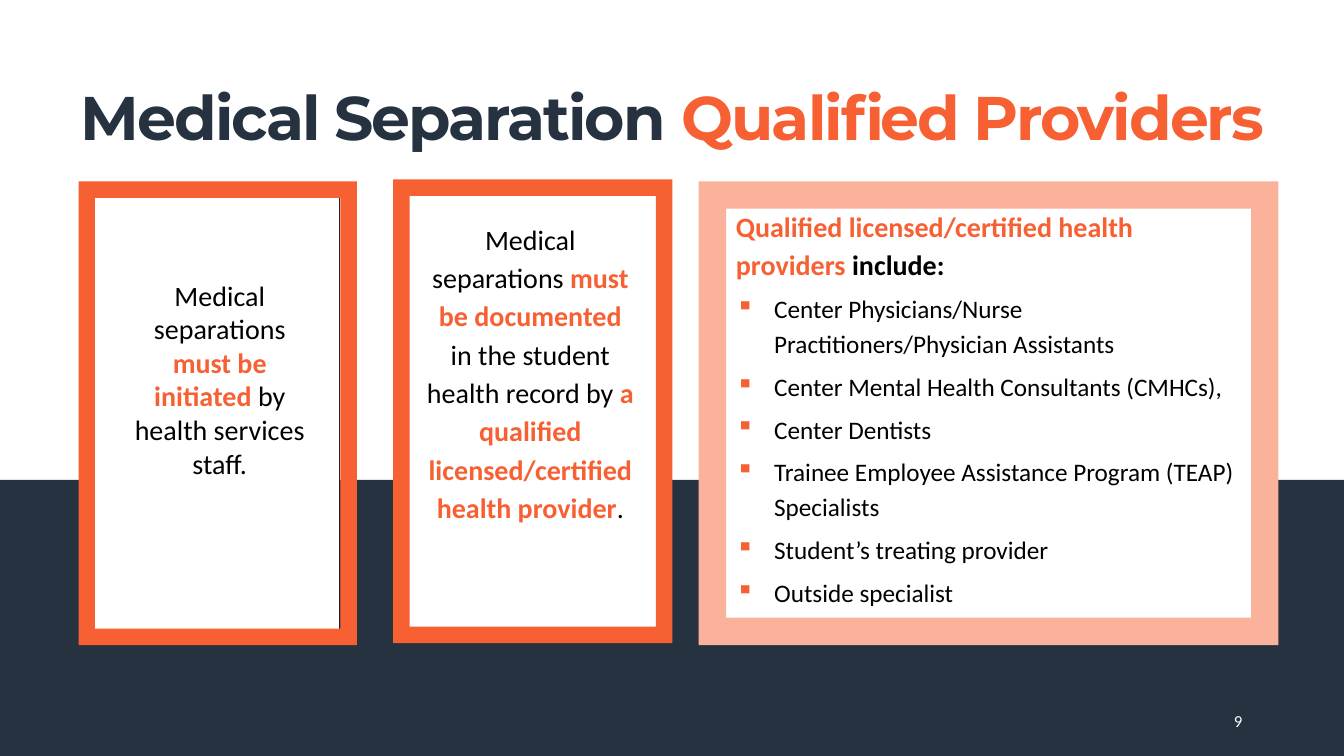
from dataclasses import dataclass

from lxml.etree import SubElement
from pptx import Presentation
from pptx.dml.color import RGBColor
from pptx.enum.shapes import MSO_SHAPE as Preset
from pptx.enum.text import MSO_ANCHOR as Anchor, MSO_AUTO_SIZE as AutoSize, PP_ALIGN as Align
from pptx.oxml.ns import qn
from pptx.util import Inches, Pt


@dataclass(frozen=True)
class Theme:
    navy: str = "263240"
    outline: str = "1C252F"
    orange: str = "F76033"
    peach: str = "FBB29B"
    white: str = "FFFFFF"
    black: str = "000000"
    heading_font: str = "Montserrat"
    body_font: str = "Calibri"
    title_size: int = 44
    body_size: int = 20
    bullet_size: int = 18
    number_size: int = 12


THEME = Theme()
LOOSE = 1.14  # line spacing of the longer texts

PROVIDERS = [
    "Center Physicians/Nurse Practitioners/Physician Assistants",
    "Center Mental Health Consultants (CMHCs),",
    "Center Dentists",
    "Trainee Employee Assistance Program (TEAP) Specialists",
    "Student’s treating provider",
    "Outside specialist",
]


def add_block(shapes, preset, box, fill, line=None, thickness=None):
    """Add a filled shape; thickness sets the border share of a frame."""
    shape = shapes.add_shape(preset, *map(Inches, box))
    shape.shadow.inherit = False
    shape.fill.solid()
    shape.fill.fore_color.rgb = RGBColor.from_string(fill)
    if line:
        shape.line.color.rgb = RGBColor.from_string(line)
        shape.line.width = Pt(1)
    else:
        shape.line.fill.background()
    if thickness:
        shape.adjustments[0] = thickness


def add_text_box(shapes, box, anchor=Anchor.TOP):
    text_frame = shapes.add_textbox(*map(Inches, box)).text_frame
    text_frame.word_wrap = True
    text_frame.vertical_anchor = anchor
    return text_frame


def write(paragraph, runs, size, font=THEME.body_font, align=Align.LEFT, spacing=None, before=0):
    """Fill a paragraph with (text, colour, bold) runs."""
    paragraph.alignment = align
    paragraph.space_before = Pt(before)
    if spacing:
        paragraph.line_spacing = spacing
    paragraph.font.name = font
    paragraph.font.size = Pt(size)
    for text, color, bold in runs:
        run = paragraph.add_run()
        run.text = text
        run.font.bold = bold
        run.font.color.rgb = RGBColor.from_string(color)


def add_bullet(paragraph, color):
    properties = paragraph._p.get_or_add_pPr()
    properties.set("marL", str(Inches(0.38)))
    properties.set("indent", str(-Inches(0.38)))
    bullet_color = SubElement(properties, qn("a:buClr"))
    SubElement(bullet_color, qn("a:srgbClr"), val=color)
    SubElement(properties, qn("a:buChar"), char="▪")


def add_title(slide):
    title = slide.shapes.title
    title.left, title.top, title.width, title.height = map(Inches, (0.41, 0.71, 12.52, 0.98))
    text_frame = title.text_frame
    text_frame.word_wrap = True
    text_frame.auto_size = AutoSize.NONE
    text_frame.vertical_anchor = Anchor.MIDDLE
    paragraph = text_frame.paragraphs[0]
    runs = [("Medical Separation ", THEME.navy, True), ("Qualified Providers", THEME.orange, True)]
    write(paragraph, runs, THEME.title_size, THEME.heading_font, Align.CENTER, 0.9)
    for run in paragraph.runs:
        run.font._element.set("spc", "-140")


def add_card(slide, panel, frame, text_box, runs, spacing=None, before=0):
    """Group a white panel, its orange frame and a centred statement."""
    shapes = slide.shapes.add_group_shape().shapes
    add_block(shapes, Preset.RECTANGLE, panel, THEME.white, THEME.outline)
    add_block(shapes, Preset.FRAME, frame, THEME.orange, thickness=0.059)
    paragraph = add_text_box(shapes, text_box).paragraphs[0]
    write(paragraph, runs, THEME.body_size, align=Align.CENTER, spacing=spacing, before=before)


def add_provider_list(slide):
    text_frame = add_text_box(slide.shapes, (7.2, 1.98, 5.25, 4.12))
    heading = [
        ("Qualified licensed/certified health providers ", THEME.orange, True),
        ("include:", THEME.black, True),
    ]
    write(text_frame.paragraphs[0], heading, THEME.body_size, spacing=LOOSE, before=6)
    for provider in PROVIDERS:
        paragraph = text_frame.add_paragraph()
        add_bullet(paragraph, THEME.orange)
        write(paragraph, [(provider, THEME.black, False)], THEME.bullet_size, spacing=LOOSE, before=6)


def main():
    presentation = Presentation()
    presentation.slide_width = Inches(13.33)
    presentation.slide_height = Inches(7.5)
    slide = presentation.slides.add_slide(presentation.slide_layouts[5])

    # Lower band and title
    add_block(slide.shapes, Preset.RECTANGLE, (0, 4.76, 13.33, 2.74), THEME.navy)
    add_title(slide)

    # Two statement cards
    add_card(
        slide, (0.9, 1.92, 2.47, 4.36), (0.78, 1.8, 2.76, 4.6), (1.21, 2.71, 1.94, 2.12),
        [
            ("Medical separations ", THEME.black, False),
            ("must be initiated ", THEME.orange, True),
            ("by health services staff.", THEME.black, False),
        ],
    )
    add_card(
        slide, (3.98, 1.81, 2.61, 4.47), (3.9, 1.78, 2.77, 4.6), (4.12, 2.11, 2.28, 3.15),
        [
            ("Medical separations ", THEME.black, False),
            ("must be documented ", THEME.orange, True),
            ("in the student health record by ", THEME.black, False),
            ("a qualified licensed/certified health provider", THEME.orange, True),
            (".", THEME.black, False),
        ],
        LOOSE, 6,
    )

    # Provider panel
    add_block(slide.shapes, Preset.RECTANGLE, (7.2, 2.09, 5.22, 4.28), THEME.white)
    add_block(slide.shapes, Preset.FRAME, (6.93, 1.8, 5.75, 4.6), THEME.peach, thickness=0.059)
    add_provider_list(slide)

    # Slide number
    number = add_text_box(slide.shapes, (9.42, 6.95, 3, 0.4), Anchor.MIDDLE).paragraphs[0]
    write(number, [("9", THEME.white, False)], THEME.number_size, align=Align.RIGHT)

    presentation.save("out.pptx")


if __name__ == "__main__":
    main()
